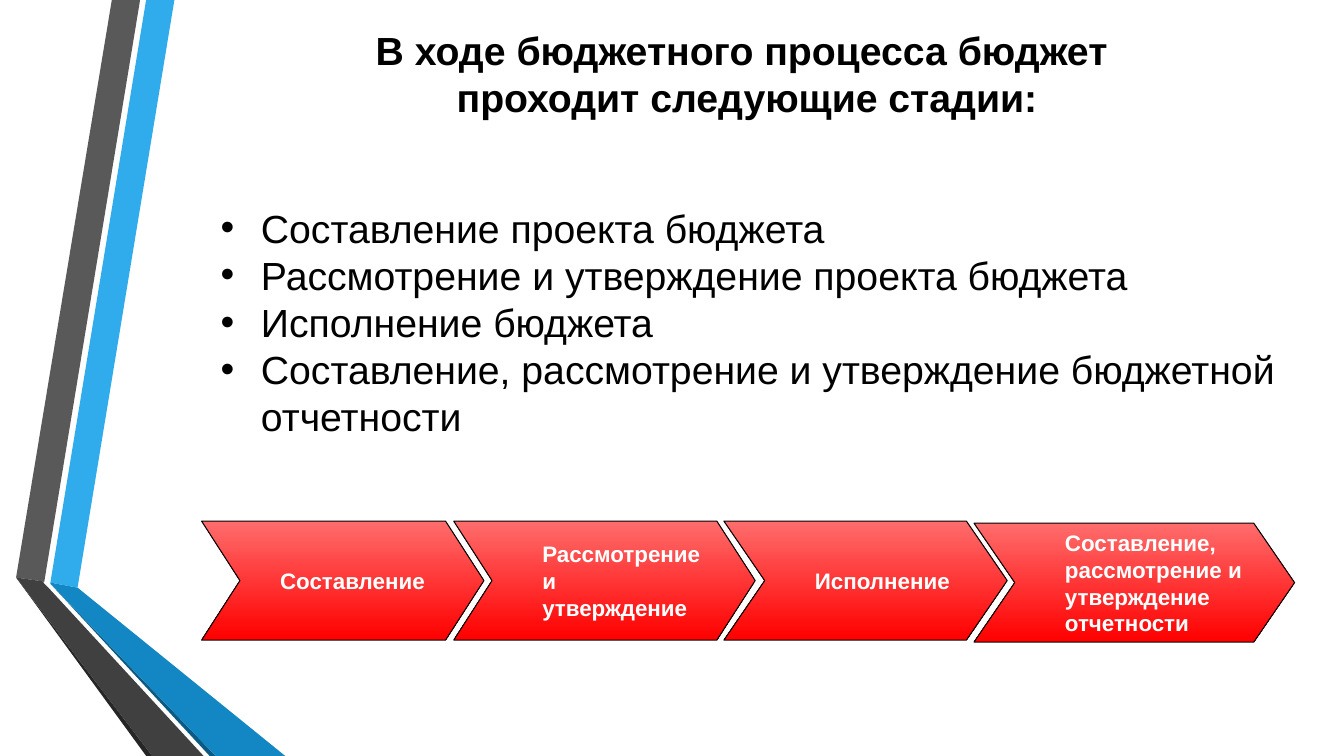
from dataclasses import dataclass

from lxml import etree
from pptx import Presentation
from pptx.dml.color import RGBColor
from pptx.enum import shapes, text
from pptx.oxml.ns import qn
from pptx.util import Inches, Pt


@dataclass(frozen=True)
class Theme:
    font: str = "Arial"
    body_size: int = 28
    stage_size: int = 16
    black: str = "000000"
    white: str = "FFFFFF"
    stage_top: str = "FF6C6C"
    stage_bottom: str = "FF0000"
    blue: str = "30ACEC"
    blue_mid: str = "1287C3"
    blue_dark: str = "0C5A82"
    gray: str = "595959"
    gray_mid: str = "404040"
    gray_dark: str = "262626"


THEME = Theme()

RIBBONS = [
    (THEME.blue, [(0.5, 5.78), (0.77, 5.83), (1.73, 0), (1.45, 0)]),
    (THEME.gray, [(1.39, 0), (1.11, 0), (0.16, 5.73), (0.44, 5.77)]),
    (THEME.gray_dark, [(0.16, 5.73), (1.45, 7.5), (1.51, 7.5)]),
    (THEME.blue_dark, [(0.5, 5.79), (2.08, 7.5), (2.14, 7.5)]),
    (THEME.blue_mid, [(0.5, 5.79), (2.14, 7.5), (2.83, 7.5), (0.77, 5.83), (0.5, 5.78)]),
    (THEME.gray_mid, [(2.02, 7.5), (0.48, 5.83), (0.43, 5.78), (0.44, 5.77),
                      (0.16, 5.73), (1.51, 7.5)]),
]

TITLE = ["В ходе бюджетного процесса бюджет", " проходит следующие стадии:"]

STEPS = [
    "Составление проекта бюджета",
    "Рассмотрение и утверждение проекта бюджета",
    "Исполнение бюджета",
    "Составление, рассмотрение и утверждение бюджетной отчетности",
]

STAGES = [
    ("Составление", 2, 5.17, 2.8, 0.322, 0.3),
    ("Рассмотрение и утверждение", 4.5, 5.17, 2.99, 0.322, 0.4),
    ("Исполнение", 7.18, 5.17, 2.81, 0.343, 0.4),
    ("Составление, рассмотрение и утверждение отчетности", 9.66, 5.19, 3.18, 0.343, 0.4),
]


def rgb(color):
    return RGBColor.from_string(color)


def style(p, size, color, bold=False):
    p.font.name = THEME.font
    p.font.size = Pt(size)
    p.font.bold = bold
    p.font.color.rgb = rgb(color)


def set_indent(p, left, first=0):
    pPr = p._p.get_or_add_pPr()
    pPr.set("marL", str(Inches(left)))
    pPr.set("indent", str(Inches(first)))
    return pPr


def add_bullet(p):
    pPr = set_indent(p, 0.4, -0.4)
    bullet_font = etree.Element(qn("a:buFont"), typeface=THEME.font)
    bullet = etree.Element(qn("a:buChar"), char="•")
    pPr.insert(0, bullet_font)
    pPr.insert(1, bullet)


def add_ribbon(slide, color, points):
    corners = [(Inches(x), Inches(y)) for x, y in points]
    builder = slide.shapes.build_freeform(*corners[0])
    builder.add_line_segments(corners[1:], close=True)
    sp = builder.convert_to_shape()
    sp.shadow.inherit = False
    sp.fill.solid()
    sp.fill.fore_color.rgb = rgb(color)
    sp.line.fill.background()


def add_text(slide, box, lines, bold=False, align=text.PP_ALIGN.LEFT, bullets=False):
    tf = slide.shapes.add_textbox(*map(Inches, box)).text_frame
    tf.word_wrap = True
    tf.vertical_anchor = text.MSO_ANCHOR.MIDDLE
    tf.text = "\n".join(lines)
    for p in tf.paragraphs:
        p.alignment = align
        style(p, THEME.body_size, THEME.black, bold)
        if bullets:
            add_bullet(p)


def add_stage(slide, label, left, top, width, notch, indent):
    sp = slide.shapes.add_shape(shapes.MSO_SHAPE.CHEVRON, Inches(left), Inches(top),
                                Inches(width), Inches(1.18))
    sp.adjustments[0] = notch
    sp.shadow.inherit = False
    sp.fill.gradient()
    sp.fill.gradient_angle = 270
    for stop, color in zip(sp.fill.gradient_stops, (THEME.stage_top, THEME.stage_bottom)):
        stop.color.rgb = rgb(color)
    sp.line.color.rgb = rgb(THEME.black)
    sp.line.width = Pt(0.75)
    tf = sp.text_frame
    tf.word_wrap = True
    tf.vertical_anchor = text.MSO_ANCHOR.MIDDLE
    p = tf.paragraphs[0]
    p.text = label
    p.alignment = text.PP_ALIGN.LEFT
    style(p, THEME.stage_size, THEME.white, bold=True)
    set_indent(p, indent)


def main():
    prs = Presentation()
    prs.slide_width = Inches(13.33)
    prs.slide_height = Inches(7.5)
    slide = prs.slides.add_slide(prs.slide_layouts[6])
    for color, points in RIBBONS:
        add_ribbon(slide, color, points)
    add_text(slide, (1.94, 0.21, 10.83, 1.03), TITLE, bold=True, align=text.PP_ALIGN.CENTER)
    add_text(slide, (2.09, 1.96, 10.87, 2.46), STEPS, bullets=True)
    for stage in STAGES:
        add_stage(slide, *stage)
    prs.save("out.pptx")


if __name__ == "__main__":
    main()
